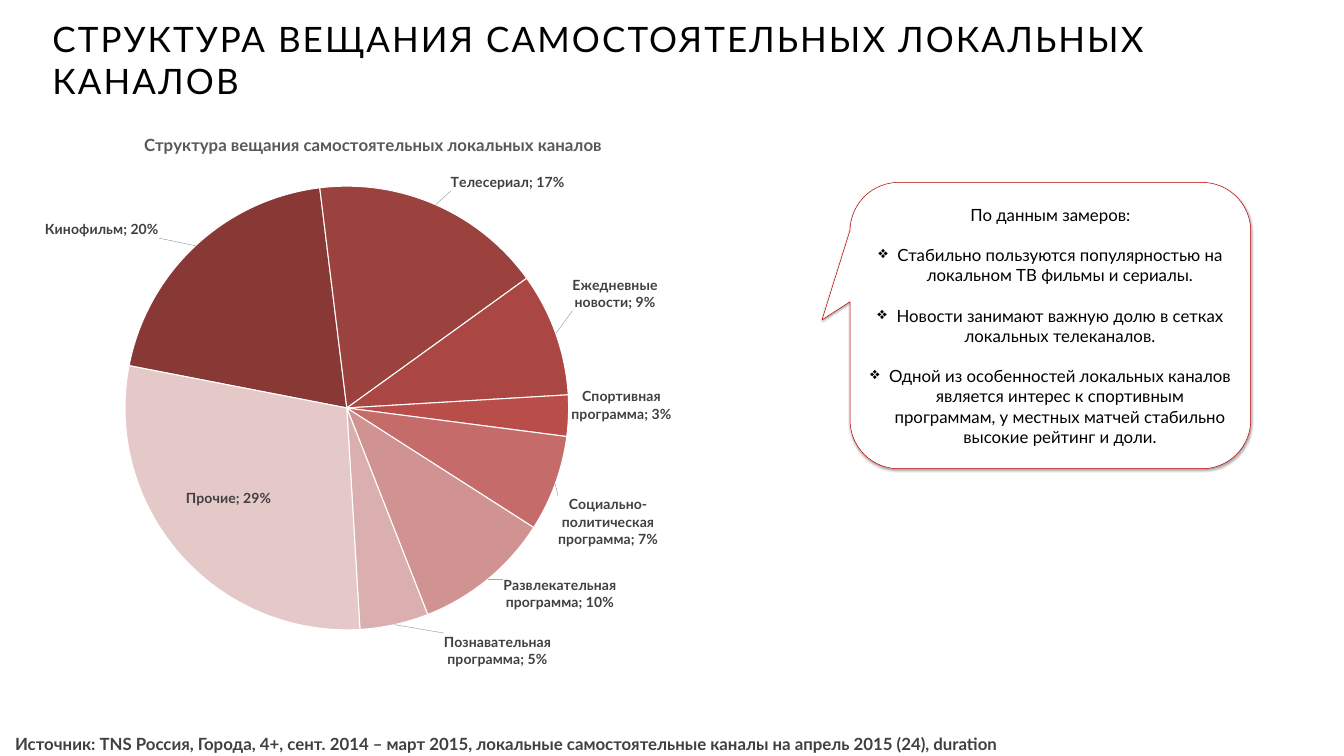
"""Builds the slide on the programme structure of local TV channels."""
from lxml import etree
from pptx import Presentation
from pptx import util as u
from pptx.chart import data as chart_data
from pptx.dml import color
from pptx.enum import chart as ch, shapes, text
from pptx.oxml import ns, parse_xml

HEADING = "СТРУКТУРА ВЕЩАНИЯ САМОСТОЯТЕЛЬНЫХ ЛОКАЛЬНЫХ КАНАЛОВ"
PIE_TITLE = "Структура вещания самостоятельных локальных каналов"
SOURCE = ("Источник: TNS Россия, Города, 4+, сент. 2014 – март 2015, "
          "локальные самостоятельные каналы на апрель 2015 (24), duration")
FINDINGS_INTRO = "По данным замеров:"
FINDINGS = [
    "Стабильно пользуются популярностью на локальном ТВ фильмы и сериалы.",
    "Новости занимают важную долю в сетках локальных телеканалов.",
    "Одной из особенностей локальных каналов является интерес к спортивным "
    "программам, у местных матчей стабильно высокие рейтинг и доли.",
]
GENRES = [
    ("Кинофильм", 0.20, "883936", (-0.05, -0.01)),
    ("Телесериал", 0.17, "9B413E", (0.02, -0.02)),
    ("Ежедневные новости", 0.09, "AA4744", (0.02, -0.04)),
    ("Спортивная программа", 0.03, "B94D4A", (0, -0.02)),
    ("Социально-политическая программа", 0.07, "C56B69", (0, 0.02)),
    ("Развлекательная программа", 0.10, "D19392", (0.02, -0.01)),
    ("Познавательная программа", 0.05, "DBAFAF", (0.07, 0.01)),
    ("Прочие", 0.29, "E5C8C8", (-0.05, 0.03)),
]
FIRST_ANGLE = 281
THEME = {
    "font": "Lato", "ink": "000000", "label": "404040", "caption": "595959",
    "paper": "FFFFFF", "accent": "C00000", "leader": "A6A6A6",
    "heading_size": 50, "body_size": 24, "label_size": 20,
}
WIDTH, HEIGHT = u.Inches(26.67), u.Inches(15)
AREAS = {
    "heading": (0.0352, 0.002, 0.9513, 0.1527),
    "pie": (0.0075, 0.164, 0.5182, 0.7253),
    "source": (0.0075, 0.9667, 0.8092, 0.0333),
    "findings": (0.6325, 0.2413, 0.2981, 0.3787),
}
PLOT_AREA = (0.165, 0.113, 0.637, 0.81)
TITLE_SPOT = (0.188, 0.011)


def area(name):
    x, y, w, h = AREAS[name]
    return [int(share * side) for share, side in
            zip((x, y, w, h), (WIDTH, HEIGHT, WIDTH, HEIGHT))]


def rgb(name):
    return color.RGBColor.from_string(THEME.get(name, name))


def style(font, size, ink, bold=False):
    font.name, font.size, font.bold = THEME["font"], u.Pt(THEME[size]), bold
    font.color.rgb = rgb(ink)


def chart_xml(body):
    return parse_xml(body.replace(">", f" {ns.nsdecls('c', 'a')}>", 1))


def layout(spot, absolute=True, inner=False):
    target = '<c:layoutTarget val="inner"/>' if inner else ""
    modes = '<c:xMode val="edge"/><c:yMode val="edge"/>' if absolute else ""
    values = "".join(f'<c:{key} val="{v}"/>' for key, v in zip("xywh", spot))
    return chart_xml("<c:layout><c:manualLayout>"
                     f"{target}{modes}{values}</c:manualLayout></c:layout>")


def place(parent, after, spot, **options):
    for old in parent.xpath("c:layout"):
        parent.remove(old)
    new = layout(spot, **options)
    if after is None:
        parent.insert(0, new)
    else:
        after.addnext(new)


def add_heading(slide):
    box = slide.shapes.add_textbox(*area("heading"))
    frame = box.text_frame
    frame.word_wrap, frame.vertical_anchor = True, text.MSO_ANCHOR.MIDDLE
    frame.text = HEADING
    run = frame.paragraphs[0].runs[0]
    style(run.font, "heading_size", "ink")
    run.font._element.set("spc", "300")


def add_source(slide):
    frame = slide.shapes.add_textbox(*area("source")).text_frame
    frame.word_wrap = True
    frame.text = SOURCE
    frame.paragraphs[0].alignment = text.PP_ALIGN.JUSTIFY
    style(frame.paragraphs[0].runs[0].font, "body_size", "label", True)


def add_pie(slide):
    data = chart_data.CategoryChartData(number_format="0%")
    data.categories = [genre[0] for genre in GENRES]
    data.add_series("Series 1", [genre[1] for genre in GENRES])
    pie = slide.shapes.add_chart(ch.XL_CHART_TYPE.PIE, *area("pie"), data).chart
    pie.has_legend = False
    style(pie.font, "label_size", "label")
    caption = pie.chart_title.text_frame
    caption.text = PIE_TITLE
    style(caption.paragraphs[0].runs[0].font, "body_size", "caption", True)

    plot = pie.plots[0]
    plot.vary_by_categories = True
    series = plot.series[0]
    labels = series.data_labels
    labels.show_value = labels.show_category_name = True
    labels.number_format, labels.number_format_is_linked = "0%", False
    style(labels.font, "label_size", "label", True)
    for index, (genre, share, fill, shift) in enumerate(GENRES):
        point = series.points[index]
        point.format.fill.solid()
        point.format.fill.fore_color.rgb = rgb(fill)
        point.format.line.color.rgb = rgb("paper")
        point.format.line.width = u.Pt(1.5)
        style(point.data_label.font, "label_size", "label", True)
        inside = genre == GENRES[-1][0]
        point.data_label.position = (ch.XL_LABEL_POSITION.CENTER if inside
                                     else ch.XL_LABEL_POSITION.OUTSIDE_END)

    root = pie.element
    for label, genre in zip(root.xpath(".//c:dLbl"), GENRES):
        idx = label.xpath("c:idx")[0]
        idx.addnext(chart_xml('<c:numFmt formatCode="0%" sourceLinked="0"></c:numFmt>'))
        place(label, idx, genre[3], absolute=False)
        label.xpath("c:showCatName")[0].set("val", "1")
    for last_flag in root.xpath(".//c:ser//c:showBubbleSize"):
        last_flag.addnext(chart_xml("<c:separator>; </c:separator>"))
    root.xpath(".//c:ser/c:dLbls")[0].append(chart_xml(
        '<c:leaderLines><c:spPr><a:ln w="9525"><a:solidFill>'
        f'<a:srgbClr val="{THEME["leader"]}"/>'
        "</a:solidFill></a:ln></c:spPr></c:leaderLines>"))
    place(root.xpath(".//c:plotArea")[0], None, PLOT_AREA, inner=True)
    title = root.xpath(".//c:title")[0]
    place(title, title.xpath("c:tx")[0], TITLE_SPOT)
    wheel = root.xpath(".//c:pieChart")[0]
    for old in wheel.xpath("c:firstSliceAng"):
        wheel.remove(old)
    etree.SubElement(wheel, ns.qn("c:firstSliceAng")).set("val", str(FIRST_ANGLE))


def add_findings(slide):
    callout = slide.shapes.add_shape(
        shapes.MSO_SHAPE.ROUNDED_RECTANGULAR_CALLOUT, *area("findings"))
    for index, value in enumerate((-0.57, -0.02, 0.17)):
        callout.adjustments[index] = value
    callout.fill.solid()
    callout.fill.fore_color.rgb = rgb("paper")
    callout.line.color.rgb = rgb("accent")
    callout.line.width = u.Pt(0.75)
    callout.shadow.inherit = False
    effects = callout._element.spPr.find(ns.qn("a:effectLst"))
    effects.append(parse_xml(
        f'<a:outerShdw {ns.nsdecls("a")} blurRad="{u.Pt(3.1)}" dist="{u.Pt(1.8)}" '
        'dir="5400000" rotWithShape="0"><a:srgbClr val="000000">'
        '<a:alpha val="35000"/></a:srgbClr></a:outerShdw>'))
    frame = callout.text_frame
    frame.word_wrap, frame.vertical_anchor = True, text.MSO_ANCHOR.MIDDLE
    frame.text = "\n".join([FINDINGS_INTRO, *FINDINGS])
    for index, paragraph in enumerate(frame.paragraphs):
        paragraph.alignment = text.PP_ALIGN.CENTER
        if index:
            props = paragraph._p.get_or_add_pPr()
            indent = u.Inches(0.38)
            props.set("marL", str(indent))
            props.set("indent", str(-indent))
            etree.SubElement(props, ns.qn("a:buChar")).set("char", "❖")
            paragraph.space_before = u.Pt(1.2 * THEME["body_size"])
        style(paragraph.runs[0].font, "body_size", "ink")


def main():
    deck = Presentation()
    deck.slide_width, deck.slide_height = WIDTH, HEIGHT
    slide = deck.slides.add_slide(deck.slide_layouts[6])
    for add_part in (add_heading, add_pie, add_source, add_findings):
        add_part(slide)
    deck.save("out.pptx")


if __name__ == "__main__":
    main()
